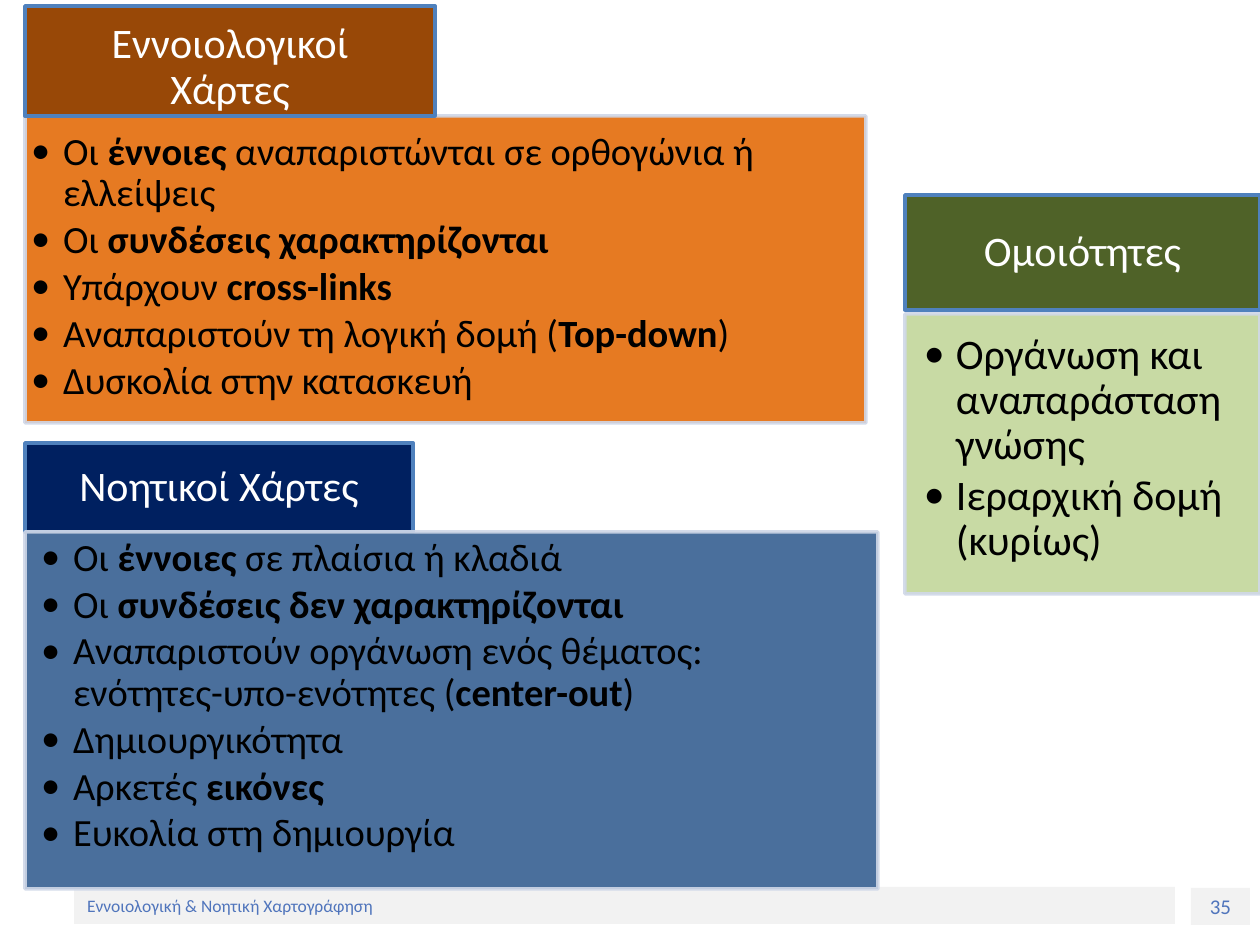
from lxml import etree
from pptx import Presentation
from pptx.dml.color import RGBColor
from pptx.enum.shapes import MSO_SHAPE
from pptx.enum.text import MSO_ANCHOR, PP_ALIGN
from pptx.oxml.ns import qn
from pptx.util import Emu, Pt

RECTANGLE = MSO_SHAPE.RECTANGLE
TOP, MIDDLE = MSO_ANCHOR.TOP, MSO_ANCHOR.MIDDLE
LEFT, CENTER = PP_ALIGN.LEFT, PP_ALIGN.CENTER

FONT = "Calibri"
EMU_PER_PX = 914400 / 126
MARGIN_X = 25
INDENT = 32
HEADER_LINE = "4F81BD"
PANEL_LINE = "D0D8E8"
BAR_FILL, BAR_TEXT = "F2F2F2", "5075BC"

CONCEPT_POINTS = [
    "Οι **έννοιες** αναπαριστώνται σε ορθογώνια ή ελλείψεις",
    "Οι **συνδέσεις χαρακτηρίζονται**",
    "Υπάρχουν **cross-links**",
    "Αναπαριστούν τη λογική δομή (**Top-down**)",
    "Δυσκολία στην κατασκευή",
]
MIND_POINTS = [
    "Οι **έννοιες** σε πλαίσια ή κλαδιά",
    "Οι **συνδέσεις δεν χαρακτηρίζονται**",
    "Αναπαριστούν οργάνωση ενός θέματος: ενότητες-υπο-ενότητες (**center-out**)",
    "Δημιουργικότητα",
    "Αρκετές **εικόνες**",
    "Ευκολία στη δημιουργία",
]
SIMILARITIES = [
    "Οργάνωση και αναπαράσταση γνώσης",
    "Ιεραρχική δομή (κυρίως)",
]


def px(length):
    return Emu(round(length * EMU_PER_PX))


def color(value):
    return RGBColor.from_string(value)


def set_opacity(fill_element, percent):
    tint = fill_element.find(".//" + qn("a:srgbClr"))
    etree.SubElement(tint, qn("a:alpha"), val=str(percent * 1000))


def add_box(page, area, fill, line=None, opacity=100, anchor=TOP, insets=(13, 6, 13, 6)):
    box = page.shapes.add_shape(RECTANGLE, *map(px, area))
    box.shadow.inherit = False
    box.fill.solid()
    box.fill.fore_color.rgb = color(fill)
    if line:
        box.line.color.rgb = color(line)
        box.line.width = Pt(2)
    else:
        box.line.fill.background()
    if opacity < 100:
        properties = box.fill._xPr
        set_opacity(properties.find(qn("a:solidFill")), opacity)
        set_opacity(properties.find(qn("a:ln")), opacity)
    frame = box.text_frame
    frame.word_wrap = True
    frame.vertical_anchor = anchor
    frame.margin_left, frame.margin_top, frame.margin_right, frame.margin_bottom = map(px, insets)
    return box


def add_bullet(para):
    properties = para._p.get_or_add_pPr()
    properties.set("marL", str(px(INDENT)))
    properties.set("indent", str(-px(INDENT)))
    etree.SubElement(properties, qn("a:buFont"), typeface=FONT)
    etree.SubElement(properties, qn("a:buChar"), char="•")


def write(para, text, size=24, ink="000000", align=LEFT, bullet=False, spacing=0.9, after=0):
    if bullet:
        add_bullet(para)
    para.alignment = align
    para.line_spacing = spacing
    para.space_after = Pt(after)
    for index, part in enumerate(text.split("**")):
        if part:
            span = para.add_run()
            span.text = part
            span.font.name = FONT
            span.font.size = Pt(size)
            span.font.bold = index % 2 == 1
            span.font.color.rgb = color(ink)


def add_header(page, area, text, fill, top_inset=14):
    box = add_box(page, area, fill, HEADER_LINE, anchor=MIDDLE, insets=(24, top_inset, 24, 14))
    write(box.text_frame.paragraphs[0], text, ink="FFFFFF", align=CENTER)


def add_panel(page, area, points, fill, size, insets):
    box = add_box(page, area, fill, PANEL_LINE, opacity=90, insets=insets)
    frame = box.text_frame
    for index, point in enumerate(points):
        para = frame.add_paragraph() if index else frame.paragraphs[0]
        write(para, point, size=size, bullet=True, after=3)


def add_bar(page, area, text, size, align, anchor):
    box = add_box(page, area, BAR_FILL, anchor=anchor)
    write(box.text_frame.paragraphs[0], text, size=size, ink=BAR_TEXT, align=align, spacing=1.0)


def main():
    deck = Presentation()
    deck.slide_width, deck.slide_height = px(1260), px(945)
    page = deck.slides.add_slide(deck.slide_layouts[6])

    add_bar(page, (1191, 888, 59, 37), "35", 12, CENTER, TOP)
    add_bar(page, (74, 887, 1101, 37), "Εννοιολογική & Νοητική Χαρτογράφηση", 10, LEFT, MIDDLE)

    add_panel(page, (MARGIN_X, 116, 841, 307), CONCEPT_POINTS, "E46C0A", 22, (6, 16, 31, 24))
    add_header(page, (MARGIN_X, 6, 410, 110), "Εννοιολογικοί Χάρτες", "984807", top_inset=28)

    add_header(page, (905, 195, 355, 115), "Ομοιότητες", "4F6228")
    add_panel(page, (905, 314, 355, 280), SIMILARITIES, "C3D69B", 24, (19, 19, 24, 28))

    add_header(page, (MARGIN_X, 443, 388, 89), "Νοητικοί Χάρτες", "002060")
    add_panel(page, (MARGIN_X, 532, 853, 357), MIND_POINTS, "376092", 22, (16, 6, 21, 24))

    deck.save("out.pptx")


if __name__ == "__main__":
    main()
